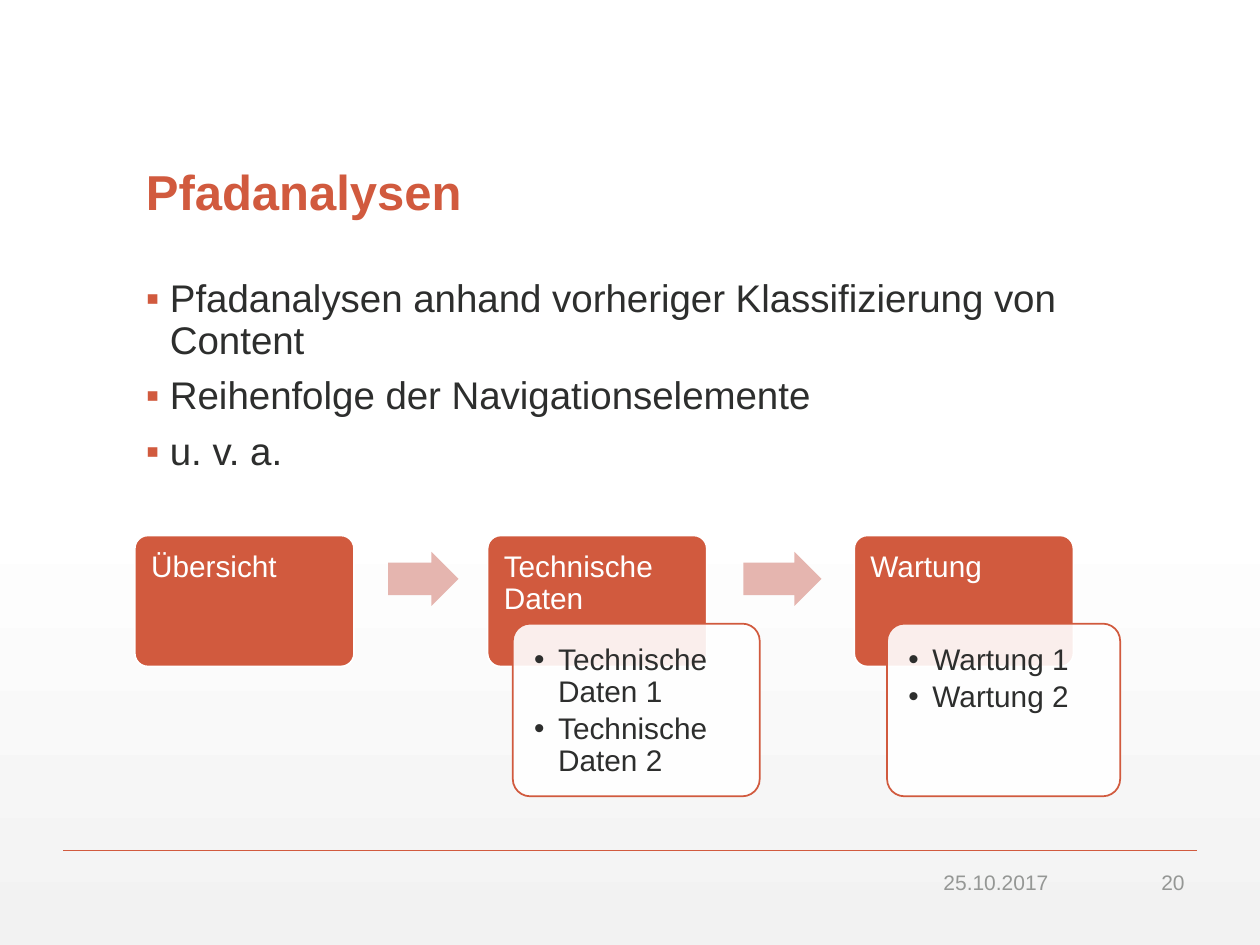
"""Build the slide on path analyses with its three-step navigation flow."""
from typing import NamedTuple

from lxml.etree import SubElement
from pptx import Presentation
from pptx.dml.color import RGBColor
from pptx.enum.shapes import MSO_CONNECTOR, MSO_SHAPE
from pptx.enum.text import MSO_ANCHOR, PP_ALIGN
from pptx.oxml.ns import qn
from pptx.util import Inches, Pt

ACCENT = RGBColor(0xD1, 0x5A, 0x3E)
ARROW = RGBColor(0xE5, 0xB5, 0xAF)
INK = RGBColor(0x2D, 0x2E, 0x2D)
GREY = RGBColor(0x95, 0x97, 0x95)
WHITE = RGBColor(0xFF, 0xFF, 0xFF)
BACKGROUND_END = RGBColor(0xF2, 0xF2, 0xF2)

HEADER_TOP, HEADER_WIDTH, HEADER_HEIGHT = 4.25, 1.74, 1.04
DETAIL_TOP, DETAIL_HEIGHT = 4.95, 1.37
ARROW_TOP, ARROW_HEIGHT = 4.38, 0.43


class Box(NamedTuple):
    left: float
    top: float
    width: float
    height: float


class TextStyle(NamedTuple):
    size: float
    color: RGBColor
    bold: bool = False
    align: PP_ALIGN = PP_ALIGN.LEFT
    line_spacing: float = 0.9
    before: float = 0
    after: float = 0
    bullet: str = ""
    bullet_color: RGBColor = INK


class Step(NamedTuple):
    left: float
    title: str
    detail_left: float = 0
    detail_width: float = 0
    details: tuple[str, ...] = ()


class Arrow(NamedTuple):
    left: float
    width: float


TITLE = TextStyle(28, ACCENT, bold=True)
BODY = TextStyle(22, INK, before=8, bullet="▪", bullet_color=ACCENT)
FOOTER = TextStyle(12, GREY, align=PP_ALIGN.RIGHT, line_spacing=1)
HEADER = TextStyle(17, WHITE, after=6)
DETAIL = TextStyle(17, INK, after=2.5, bullet="•")

POINTS = (
    "Pfadanalysen anhand vorheriger Klassifizierung von Content",
    "Reihenfolge der Navigationselemente",
    "u. v. a.",
)
STEPS = (
    Step(1.07, "Übersicht"),
    Step(3.87, "Technische Daten", 4.07, 1.96, ("Technische Daten 1", "Technische Daten 2")),
    Step(6.78, "Wartung", 7.04, 1.85, ("Wartung 1", "Wartung 2")),
)
ARROWS = (Arrow(3.08, 0.56), Arrow(5.9, 0.62))


def add_bullet(paragraph, char: str, color: RGBColor) -> None:
    properties = paragraph._p.get_or_add_pPr()
    properties.set("marL", str(Inches(0.19)))
    properties.set("indent", str(Inches(-0.19)))
    bullet_color = SubElement(properties, qn("a:buClr"))
    SubElement(bullet_color, qn("a:srgbClr"), val=str(color))
    SubElement(properties, qn("a:buFont"), typeface="Arial")
    SubElement(properties, qn("a:buChar"), char=char)


def write_text(frame, lines: tuple[str, ...], style: TextStyle, anchor=MSO_ANCHOR.TOP) -> None:
    frame.word_wrap = True
    frame.vertical_anchor = anchor
    for index, line in enumerate(lines):
        paragraph = frame.add_paragraph() if index else frame.paragraphs[0]
        paragraph.text = line
        paragraph.alignment = style.align
        paragraph.line_spacing = style.line_spacing
        paragraph.space_before = Pt(style.before)
        paragraph.space_after = Pt(style.after)
        paragraph.font.name = "Arial"
        paragraph.font.size = Pt(style.size)
        paragraph.font.bold = style.bold
        paragraph.font.color.rgb = style.color
        if style.bullet:
            add_bullet(paragraph, style.bullet, style.bullet_color)


def add_text(slide, box: Box, lines: tuple[str, ...], style: TextStyle, anchor=MSO_ANCHOR.TOP) -> None:
    textbox = slide.shapes.add_textbox(*map(Inches, box))
    write_text(textbox.text_frame, lines, style, anchor)


def add_filled(slide, preset: MSO_SHAPE, box: Box, fill: RGBColor):
    shape = slide.shapes.add_shape(preset, *map(Inches, box))
    shape.shadow.inherit = False
    shape.fill.solid()
    shape.fill.fore_color.rgb = fill
    return shape


def add_card(slide, box: Box, fill: RGBColor, outline: RGBColor,
             lines: tuple[str, ...], style: TextStyle, inset: float):
    card = add_filled(slide, MSO_SHAPE.ROUNDED_RECTANGLE, box, fill)
    card.adjustments[0] = 0.1
    card.line.color.rgb = outline
    card.line.width = Pt(1)
    frame = card.text_frame
    frame.margin_left = frame.margin_right = Inches(inset)
    frame.margin_top = frame.margin_bottom = Inches(inset)
    write_text(frame, lines, style)
    return card


def add_step(slide, step: Step) -> None:
    header = Box(step.left, HEADER_TOP, HEADER_WIDTH, HEADER_HEIGHT)
    add_card(slide, header, ACCENT, WHITE, (step.title,), HEADER, 0.1)
    if step.details:
        detail = Box(step.detail_left, DETAIL_TOP, step.detail_width, DETAIL_HEIGHT)
        card = add_card(slide, detail, WHITE, ACCENT, step.details, DETAIL, 0.13)
        fill_color = card._element.spPr.find(qn("a:solidFill"))[0]
        SubElement(fill_color, qn("a:alpha"), val="90000")


def add_arrow(slide, arrow: Arrow) -> None:
    box = Box(arrow.left, ARROW_TOP, arrow.width, ARROW_HEIGHT)
    shape = add_filled(slide, MSO_SHAPE.RIGHT_ARROW, box, ARROW)
    shape.adjustments[0] = 0.6
    shape.adjustments[1] = 0.5
    shape.line.fill.background()


def add_footer_rule(slide) -> None:
    rule = slide.shapes.add_connector(
        MSO_CONNECTOR.STRAIGHT, Inches(0.5), Inches(6.75), Inches(9.5), Inches(6.75))
    rule.line.color.rgb = ACCENT
    rule.line.width = Pt(1)
    SubElement(rule._element.spPr, qn("a:effectLst"))


def paint_background(slide) -> None:
    fill = slide.background.fill
    fill.gradient()
    fill.gradient_angle = 270
    for stop, position, color in zip(fill.gradient_stops, (0.53, 1), (WHITE, BACKGROUND_END)):
        stop.position = position
        stop.color.rgb = color


def main() -> None:
    presentation = Presentation()
    presentation.slide_width, presentation.slide_height = Inches(10), Inches(7.5)
    slide = presentation.slides.add_slide(presentation.slide_layouts[6])
    paint_background(slide)
    add_footer_rule(slide)
    add_text(slide, Box(1.06, 0.55, 7.88, 1.25), ("Pfadanalysen",), TITLE, MSO_ANCHOR.BOTTOM)
    add_text(slide, Box(1.06, 2.17, 7.88, 4.17), POINTS, BODY)
    add_text(slide, Box(7, 6.88, 1.42, 0.24), ("25.10.2017",), FOOTER, MSO_ANCHOR.MIDDLE)
    add_text(slide, Box(8.75, 6.88, 0.75, 0.24), ("20",), FOOTER, MSO_ANCHOR.MIDDLE)
    for step in STEPS:
        add_step(slide, step)
    for arrow in ARROWS:
        add_arrow(slide, arrow)
    presentation.save("out.pptx")


if __name__ == "__main__":
    main()
